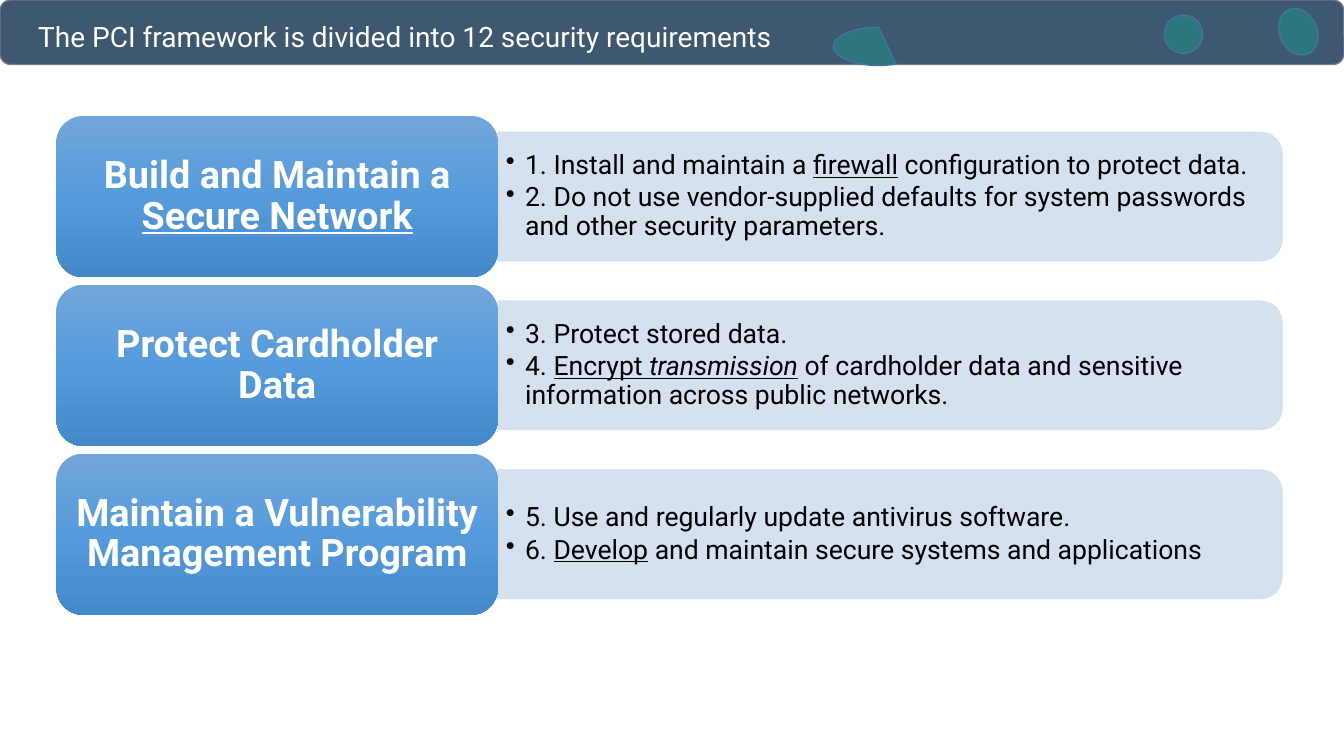
import copy

import pptx
import pptx.dml.color
import pptx.enum.shapes
import pptx.enum.text
import pptx.oxml.ns
import pptx.oxml.xmlchemy
import pptx.util
from lxml import etree

SHAPES = pptx.enum.shapes.MSO_SHAPE
ALIGN = pptx.enum.text.PP_ALIGN
qn = pptx.oxml.ns.qn

COLORS = {
    "header": "3E5870", "header_line": "7A7989",
    "accent": "1C9687", "chord": "2D777C", "accent_line": "43739E",
    "panel": "D2DEEF", "text": "000000", "white": "FFFFFF",
}
BLOCK_GRADIENT = ((0, "71A6DB"), (0.5, "559BDB"), (1, "448ACA"))

COLUMNS, ROWS = 160, 90
BLOCK_LEFT, BLOCK_WIDTH, BLOCK_HEIGHT = 6.72, 52.56, 19.2
FIRST_TOP, BLOCK_PITCH = 13.8, 20.1
PANEL_LEFT, PANEL_WIDTH, PANEL_HEIGHT = BLOCK_LEFT + BLOCK_WIDTH, 93.36, 15.36
BULLETS_WIDTH, BULLETS_HEIGHT = 92.64, 13.8

# Each run is (text, style), where style may hold "u" and "i".
REQUIREMENT_GROUPS = [
    ([("Build and Maintain a ", ""), ("Secure Network", "u")],
     [[("1. Install and maintain a ", ""), ("firewall", "u"),
       (" configuration to protect data.", "")],
      [("2. Do not use vendor-supplied defaults for system passwords "
        "and other security parameters.", "")]]),
    ([("Protect Cardholder Data", "")],
     [[("3. Protect stored data.", "")],
      [("4. ", ""), ("Encrypt ", "u"), ("transmission", "ui"),
       (" of cardholder data and sensitive information across public networks.", "")]]),
    ([("Maintain a Vulnerability Management Program", "")],
     [[("5. Use and regularly update antivirus software.", "")],
      [("6. ", ""), ("Develop", "u"),
       (" and maintain secure systems and applications", "")]]),
]


def rgb(hex_color):
    return pptx.dml.color.RGBColor.from_string(hex_color)


def write_text(frame, paragraphs, size=20, color="text", bold=False,
               align=ALIGN.LEFT, bullet=False, space_after=0, insets=(0.1, 0.05)):
    """Fill a text frame; each paragraph is a list of (text, style) runs."""
    frame.word_wrap = True
    frame.vertical_anchor = pptx.enum.text.MSO_ANCHOR.MIDDLE
    frame.margin_left = frame.margin_right = pptx.util.Inches(insets[0])
    frame.margin_top = frame.margin_bottom = pptx.util.Inches(insets[1])
    for index, runs in enumerate(paragraphs):
        paragraph = frame.add_paragraph() if index else frame.paragraphs[0]
        paragraph.alignment = align
        paragraph.line_spacing = 0.9
        paragraph.space_after = pptx.util.Pt(space_after)
        if bullet:
            properties = paragraph._p.get_or_add_pPr()
            indent = pptx.util.Inches(0.19)
            properties.set("marL", str(indent))
            properties.set("indent", str(-indent))
            etree.SubElement(properties, qn("a:buChar")).set("char", "•")
        for content, style in runs:
            run = paragraph.add_run()
            run.text = content
            run.font.name = "Roboto"
            run.font.size = pptx.util.Pt(size)
            run.font.color.rgb = rgb(COLORS[color])
            run.font.bold = bold
            run.font.underline = "u" in style
            run.font.italic = "i" in style


class SlideBuilder:
    def __init__(self, presentation):
        self.column = presentation.slide_width / COLUMNS
        self.row = presentation.slide_height / ROWS
        self.slide = presentation.slides.add_slide(presentation.slide_layouts[6])

    def place(self, left, top, width, height):
        return (round(left * self.column), round(top * self.row),
                round(width * self.column), round(height * self.row))

    def shape(self, kind, box, fill=None, line=None, line_width=1,
              opacity=100, line_opacity=100, rotation=0):
        shape = self.slide.shapes.add_shape(kind, *self.place(*box))
        shape.shadow.inherit = False
        shape.rotation = rotation
        if fill:
            shape.fill.solid()
            shape.fill.fore_color.rgb = rgb(COLORS[fill])
            self.set_opacity(shape, "a:solidFill", opacity)
        if line:
            shape.line.color.rgb = rgb(COLORS[line])
            shape.line.width = pptx.util.Pt(line_width)
            self.set_opacity(shape, "a:ln/a:solidFill", line_opacity)
        else:
            shape.line.fill.background()
        return shape

    def set_opacity(self, shape, fill_tag, percent):
        if percent < 100:
            color = shape.element.spPr.xpath(fill_tag + "/a:srgbClr")[0]
            etree.SubElement(color, qn("a:alpha")).set("val", str(percent * 1000))

    def gradient(self, shape, stops):
        shape.fill.gradient()
        shape.fill.gradient_angle = 270
        stop_list = shape.element.spPr.xpath("a:gradFill/a:gsLst")[0]
        stop_list.append(copy.deepcopy(stop_list[0]))
        for stop, (position, color) in zip(shape.fill.gradient_stops, stops):
            stop.position = position
            stop.color.rgb = rgb(color)

    def text(self, box, paragraphs, **text_format):
        text_box = self.slide.shapes.add_textbox(*self.place(*box))
        write_text(text_box.text_frame, paragraphs, **text_format)

    def header(self, title):
        self.shape(SHAPES.ROUNDED_RECTANGLE, (0, 0, COLUMNS, 7.68),
                   "header", "header_line", line_opacity=94)
        self.shape(SHAPES.OVAL, (138.6, 1.8, 4.56, 4.56),
                   "accent", "accent_line", opacity=50)
        self.shape(SHAPES.OVAL, (151.68, 1.56, 5.76, 4.44),
                   "accent", "accent_line", opacity=50, rotation=246)
        self.shape(SHAPES.CHORD, (99.24, 3.24, 10.68, 4.56), "chord", "accent_line")
        self.text((3.36, 2.16, 139.08, 4.8), [[(title, "")]], color="white")

    def panel(self, middle):
        """Draw a panel with round right corners: an upright shape turned by 90°."""
        center = PANEL_LEFT + PANEL_WIDTH / 2
        self.shape(SHAPES.ROUND_2_SAME_RECTANGLE,
                   (center - PANEL_HEIGHT / 2, middle - PANEL_WIDTH / 2,
                    PANEL_HEIGHT, PANEL_WIDTH),
                   "panel", "panel", line_width=0.5, opacity=90,
                   line_opacity=90, rotation=90)

    def requirement_group(self, top, heading, requirements):
        middle = top + BLOCK_HEIGHT / 2
        self.panel(middle)
        self.text((PANEL_LEFT, middle - BULLETS_HEIGHT / 2, BULLETS_WIDTH, BULLETS_HEIGHT),
                  requirements, size=19, bullet=True, space_after=2.5, insets=(0.08, 0.04))
        block = self.shape(SHAPES.ROUNDED_RECTANGLE,
                           (BLOCK_LEFT, top, BLOCK_WIDTH, BLOCK_HEIGHT))
        self.gradient(block, BLOCK_GRADIENT)
        write_text(block.text_frame, [heading], size=27, color="white", bold=True,
                   align=ALIGN.CENTER, insets=(0.11, 0.06))


def main():
    presentation = pptx.Presentation()
    presentation.slide_width = pptx.util.Inches(13.33)
    presentation.slide_height = pptx.util.Inches(7.5)
    builder = SlideBuilder(presentation)
    builder.header("The PCI framework is divided into 12 security requirements")
    for index, (heading, requirements) in enumerate(REQUIREMENT_GROUPS):
        builder.requirement_group(FIRST_TOP + index * BLOCK_PITCH, heading, requirements)
    presentation.save("out.pptx")


if __name__ == "__main__":
    main()
